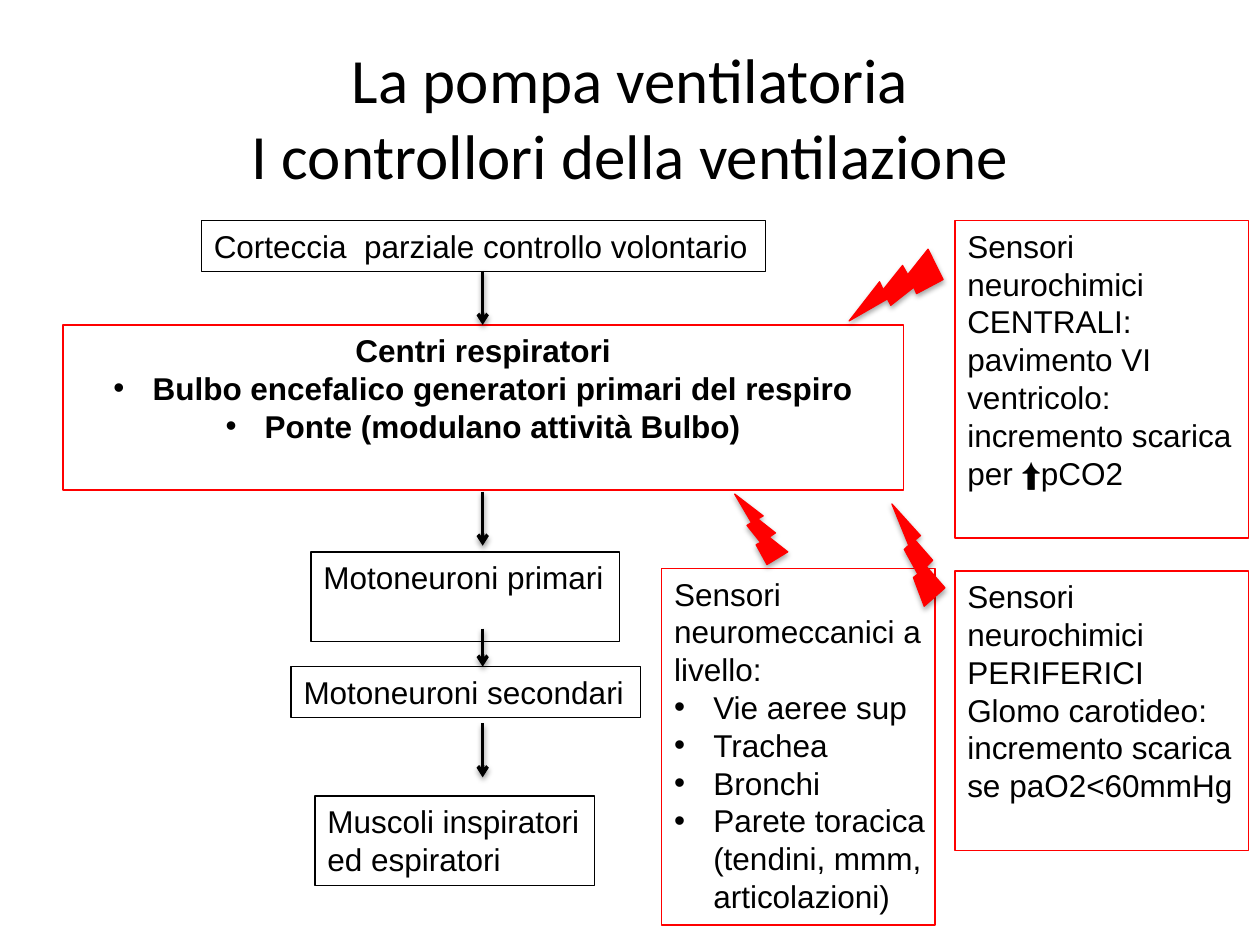
from lxml.etree import SubElement
from pptx import Presentation
from pptx.dml.color import RGBColor
from pptx.enum.shapes import MSO_CONNECTOR, MSO_SHAPE
from pptx.enum.text import MSO_ANCHOR, MSO_AUTO_SIZE, PP_ALIGN
from pptx.oxml import parse_xml
from pptx.oxml.ns import nsdecls, qn
from pptx.util import Cm, Pt

COLORS = {"black": "000000", "red": "FF0000", "white": "FFFFFF"}
TITLE = ("La pompa ventilatoria", "I controllori della ventilazione")
BULLET = "• "
BULLET_INDENT = Cm(0.79)

# Frames are left, top, width, height in cm.
CENTERS = ((1.27, 6.55, 16.94, 3.33), [
    "Centri respiratori",
    BULLET + "Bulbo encefalico generatori primari del respiro",
    BULLET + "Ponte (modulano attività Bulbo)",
])
STEPS = [
    ((6.27, 11.13, 6.22, 1.8), ["Motoneuroni primari"]),
    ((5.87, 13.44, 7.04, 1.02), ["Motoneuroni secondari"]),
    ((6.35, 16.05, 5.64, 1.8), ["Muscoli inspiratori", "ed espiratori"]),
    ((4.06, 4.45, 11.38, 1.02), ["Corteccia  parziale controllo volontario"]),
]
SENSORS = [
    ((19.25, 11.51, 5.92, 5.64), [
        "Sensori neurochimici",
        "PERIFERICI",
        "Glomo carotideo: incremento scarica se paO2<60mmHg",
    ]),
    ((19.25, 4.45, 5.92, 6.4), [
        "Sensori neurochimici CENTRALI: pavimento VI ventricolo: "
        "incremento scarica per ⬆pCO2",
    ]),
    ((13.34, 11.46, 5.51, 7.19), [
        "Sensori neuromeccanici a livello:",
        BULLET + "Vie aeree sup",
        BULLET + "Trachea",
        BULLET + "Bronchi",
        BULLET + "Parete toracica (tendini, mmm, articolazioni)",
    ]),
]
BOLTS = [  # frame, rotation
    ((17.98, 10.16, 1.07, 2.06), 180),
    ((17.32, 4.83, 1.52, 1.85), 92.8),
    ((14.81, 9.96, 1.07, 1.42), 180),
]
ARROW_X = 9.73
ARROWS = [(5.46, 6.55), (9.91, 11), (12.67, 13.44), (14.58, 15.67)]


def rgb(name):
    return RGBColor.from_string(COLORS[name])


def lengths(frame):
    return [Cm(value) for value in frame]


def style_line(line, color, width=0.75):
    line.color.rgb = rgb(color)
    line.width = Pt(width)


def add_run(para, text, size, font, bold=False):
    run = para.add_run()
    run.text = text
    run.font.size = Pt(size)
    run.font.name = font
    run.font.bold = bold
    run.font.color.rgb = rgb("black")


def add_soft_shadow(shape, opacity):
    properties = shape._element.spPr
    for effect in properties.findall(qn("a:effectLst")):
        properties.remove(effect)
    properties.append(parse_xml(
        f'<a:effectLst {nsdecls("a")}>'
        f'<a:outerShdw blurRad="{Pt(3.1)}" dist="{Pt(1.7)}" dir="5400000" rotWithShape="0">'
        f'<a:srgbClr val="{COLORS["black"]}"><a:alpha val="{opacity * 1000}"/></a:srgbClr>'
        '</a:outerShdw></a:effectLst>'))


def add_bullet(para):
    properties = para._p.get_or_add_pPr()
    properties.set("marL", str(BULLET_INDENT))
    properties.set("indent", str(-BULLET_INDENT))
    SubElement(properties, qn("a:buFont")).set("typeface", "Arial")
    SubElement(properties, qn("a:buChar")).set("char", BULLET.strip())


def add_box(slide, frame, lines, border, fill=None, align=PP_ALIGN.LEFT, bold=False):
    box = slide.shapes.add_shape(MSO_SHAPE.RECTANGLE, *lengths(frame))
    box.shadow.inherit = False
    style_line(box.line, border)
    if fill:
        box.fill.solid()
        box.fill.fore_color.rgb = rgb(fill)
    else:
        box.fill.background()
    text = box.text_frame
    text.word_wrap = True
    text.auto_size = MSO_AUTO_SIZE.NONE
    text.vertical_anchor = MSO_ANCHOR.TOP
    if align == PP_ALIGN.LEFT:
        text.margin_right = Cm(0.1)
    for index, line in enumerate(lines):
        para = text.add_paragraph() if index else text.paragraphs[0]
        para.alignment = align
        if line.startswith(BULLET):
            add_bullet(para)
        add_run(para, line.removeprefix(BULLET), 18, "Arial", bold)


def add_bolt(slide, frame, rotation):
    bolt = slide.shapes.add_shape(MSO_SHAPE.LIGHTNING_BOLT, *lengths(frame))
    bolt.rotation = rotation
    bolt.fill.solid()
    bolt.fill.fore_color.rgb = rgb("red")
    style_line(bolt.line, "red")
    add_soft_shadow(bolt, 35)


def add_arrow(slide, top, bottom):
    arrow = slide.shapes.add_connector(
        MSO_CONNECTOR.STRAIGHT, *lengths((ARROW_X, top, ARROW_X, bottom)))
    style_line(arrow.line, "black", 2)
    SubElement(arrow.line._get_or_add_ln(), qn("a:tailEnd")).set("type", "arrow")
    add_soft_shadow(arrow, 38)


def set_title(slide):
    title = slide.shapes.title
    title.left, title.top, title.width, title.height = lengths((1.27, 0.76, 22.86, 3.18))
    title.text_frame.vertical_anchor = MSO_ANCHOR.MIDDLE
    para = title.text_frame.paragraphs[0]
    para.alignment = PP_ALIGN.CENTER
    for index, line in enumerate(TITLE):
        if index:
            para.add_line_break()
        add_run(para, line, 36, "Calibri")


def main():
    deck = Presentation()
    deck.slide_width, deck.slide_height = Cm(25.4), Cm(19.05)
    slide = deck.slides.add_slide(deck.slide_layouts[5])
    set_title(slide)
    add_box(slide, *CENTERS, "red", "white", PP_ALIGN.CENTER, bold=True)
    for frame, lines in STEPS:
        add_box(slide, frame, lines, "black")
    for frame, lines in SENSORS:
        add_box(slide, frame, lines, "red")
    for frame, rotation in BOLTS:
        add_bolt(slide, frame, rotation)
    for top, bottom in ARROWS:
        add_arrow(slide, top, bottom)
    deck.save("out.pptx")


if __name__ == "__main__":
    main()
